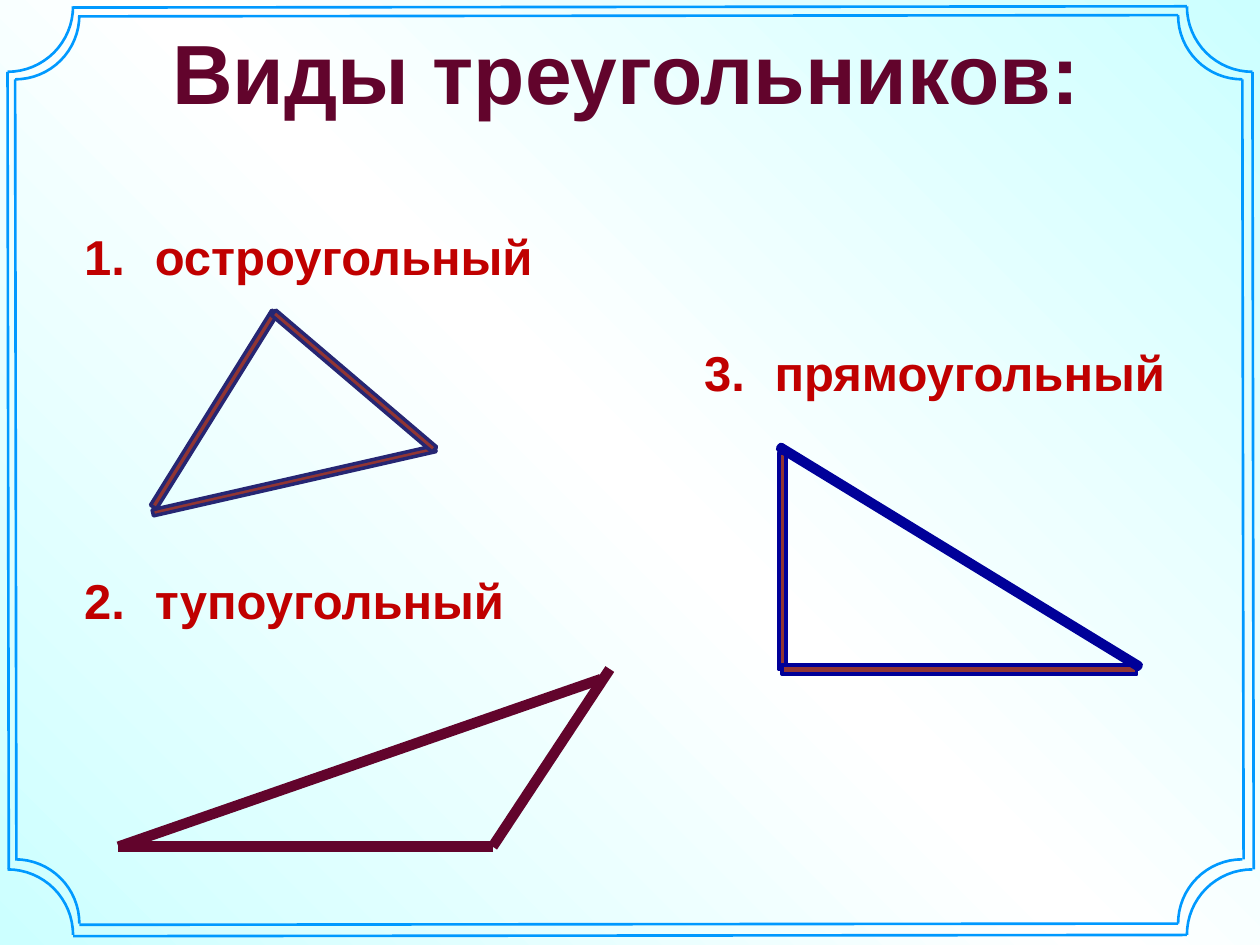
"""Build a slide that shows three kinds of triangles inside an ornamental frame."""
import copy
import dataclasses
import math
import typing

import pptx
import pptx.dml.color
import pptx.enum.shapes
import pptx.enum.text
import pptx.oxml.ns
import pptx.oxml.xmlchemy
import pptx.util

Inches = pptx.util.Inches
Point = tuple[float, float]


@dataclasses.dataclass(frozen=True)
class Theme:
    font: str = "Arial"
    title_size: float = 48
    item_size: float = 28
    plum: str = "62042C"
    red: str = "C00000"
    brick: str = "913533"
    indigo: str = "262673"
    navy: str = "000099"
    frame: str = "0099FF"
    frame_width: float = 1.5
    obtuse_width: float = 6
    background: tuple[str, ...] = ("CCFFFF", "FFFFFF", "CCFFFF")


class Item(typing.NamedTuple):
    number: int
    text: str
    left: float
    top: float
    width: float


class Bar(typing.NamedTuple):
    left: float
    top: float
    width: float
    height: float
    rotation: float
    color: str
    line_width: float = 2


class Ring(typing.NamedTuple):
    left: float
    top: float
    right: float
    bottom: float
    radius: float


THEME = Theme()
SLANT = 0.01
ARC_STEPS = 16
ITEMS = (
    Item(1, "остроугольный", 0.5, 1.75, 4.42),
    Item(2, "тупоугольный", 0.5, 4.48, 4.42),
    Item(3, "прямоугольный", 5.42, 2.67, 4.33),
)
BARS = (
    Bar(0.77, 3.71, 3.13, 0.21, 347.2, THEME.indigo),
    Bar(0.46, 3.13, 2.48, 0.24, 301.9, THEME.indigo),
    Bar(5.04, 4.34, 2.34, 0.23, 90, THEME.navy),
    Bar(5.7, 5.16, 3.83, 0.31, 0, THEME.navy),
    Bar(1.67, 2.91, 2.28, 0.23, 40.4, THEME.indigo),
    Bar(5.35, 4.38, 4.53, 0.08, 31.4, THEME.navy, 4.5),
)
OBTUSE_SIDES = (
    ((3.91, 6.72), (4.84, 5.31)),
    ((0.94, 6.72), (4.77, 5.39)),
    ((0.94, 6.72), (3.91, 6.72)),
)
RINGS = (
    Ring(0.12, 0.12, 9.86, 7.33, 0.51),
    Ring(0.06, 0.05, 9.94, 7.42, 0.52),
)


def rgb(value: str) -> pptx.dml.color.RGBColor:
    """Turn a hexadecimal string into a colour."""
    return pptx.dml.color.RGBColor.from_string(value)


def set_line(line, color: str, width: float) -> None:
    """Give a line its colour and its width in points."""
    line.color.rgb = rgb(color)
    line.width = pptx.util.Pt(width)


def paint_background(slide) -> None:
    """Fill the slide with an evenly spaced diagonal gradient."""
    fill = slide.background.fill
    fill.gradient()
    fill.gradient_angle = 45
    stop_list = slide.element.find(".//" + pptx.oxml.ns.qn("a:gsLst"))
    stop_list.insert(1, copy.deepcopy(stop_list[0]))
    last = len(THEME.background) - 1
    for index, (stop, color) in enumerate(zip(fill.gradient_stops, THEME.background)):
        stop.position = index / last
        stop.color.rgb = rgb(color)


def add_text(slide, text: str, *, left: float, top: float, width: float, height: float,
             size: float, color: str, centered: bool = False, number: int = 0) -> None:
    """Add bold text, centred or numbered on request."""
    shape = slide.shapes.add_textbox(*map(Inches, (left, top, width, height)))
    frame = shape.text_frame
    frame.word_wrap = True
    paragraph = frame.paragraphs[0]
    if centered:
        frame.vertical_anchor = pptx.enum.text.MSO_ANCHOR.MIDDLE
        paragraph.alignment = pptx.enum.text.PP_ALIGN.CENTER
    run = paragraph.add_run()
    run.text = text
    run.font.name = THEME.font
    run.font.size = pptx.util.Pt(size)
    run.font.bold = True
    run.font.color.rgb = rgb(color)
    if number:
        properties = paragraph._p.get_or_add_pPr()
        properties.set("marL", str(Inches(0.63)))
        properties.set("indent", str(Inches(-0.56)))
        bullet = pptx.oxml.xmlchemy.OxmlElement("a:buAutoNum")
        bullet.set("type", "arabicPeriod")
        bullet.set("startAt", str(number))
        properties.append(bullet)


def add_bar(slide, bar: Bar) -> None:
    """Add one outlined bar as a triangle side."""
    shape = slide.shapes.add_shape(
        pptx.enum.shapes.MSO_SHAPE.MATH_MINUS,
        *map(Inches, (bar.left, bar.top, bar.width, bar.height)))
    shape.rotation = bar.rotation
    shape.shadow.inherit = False
    shape.fill.solid()
    shape.fill.fore_color.rgb = rgb(THEME.brick)
    set_line(shape.line, bar.color, bar.line_width)


def add_side(slide, start: Point, end: Point) -> None:
    """Add one straight side of the obtuse triangle."""
    connector = slide.shapes.add_connector(
        pptx.enum.shapes.MSO_CONNECTOR.STRAIGHT, *map(Inches, start + end))
    set_line(connector.line, THEME.plum, THEME.obtuse_width)
    connector._element.spPr.append(pptx.oxml.xmlchemy.OxmlElement("a:effectLst"))


def add_outline(slide, points: list[Point]) -> None:
    """Add an open, unfilled frame line through the points."""
    start, *rest = [(Inches(x), Inches(y)) for x, y in points]
    builder = slide.shapes.build_freeform(*start, scale=1.0)
    builder.add_line_segments(rest, close=False)
    shape = builder.convert_to_shape()
    shape.shadow.inherit = False
    shape.fill.background()
    set_line(shape.line, THEME.frame, THEME.frame_width)


def add_ring(slide, ring: Ring) -> None:
    """Add four sides and four concave corners of one frame ring."""
    left, top, right, bottom, radius = ring
    for y in (top, bottom):
        add_outline(slide, [(right - radius, y), (left + radius, y + SLANT)])
    for x in (left, right):
        add_outline(slide, [(x + SLANT, bottom - radius), (x, top + radius)])
    angles = [math.pi / 2 * step / ARC_STEPS for step in range(ARC_STEPS + 1)]
    for x, across in ((left, radius), (right, -radius)):
        for y, down in ((top, radius), (bottom, -radius)):
            add_outline(slide, [(x + across * math.cos(angle), y + down * math.sin(angle))
                                for angle in angles])


def main() -> None:
    """Build and save the presentation."""
    presentation = pptx.Presentation()
    presentation.slide_width, presentation.slide_height = Inches(10), Inches(7.5)
    slide = presentation.slides.add_slide(presentation.slide_layouts[6])
    paint_background(slide)
    add_text(slide, "Виды треугольников:", left=0.47, top=0, width=9, height=1.12,
             size=THEME.title_size, color=THEME.plum, centered=True)
    for item in ITEMS:
        add_text(slide, item.text, left=item.left, top=item.top, width=item.width,
                 height=0.75, size=THEME.item_size, color=THEME.red, number=item.number)
    for bar in BARS:
        add_bar(slide, bar)
    for start, end in OBTUSE_SIDES:
        add_side(slide, start, end)
    for ring in RINGS:
        add_ring(slide, ring)
    presentation.save("out.pptx")


if __name__ == "__main__":
    main()
